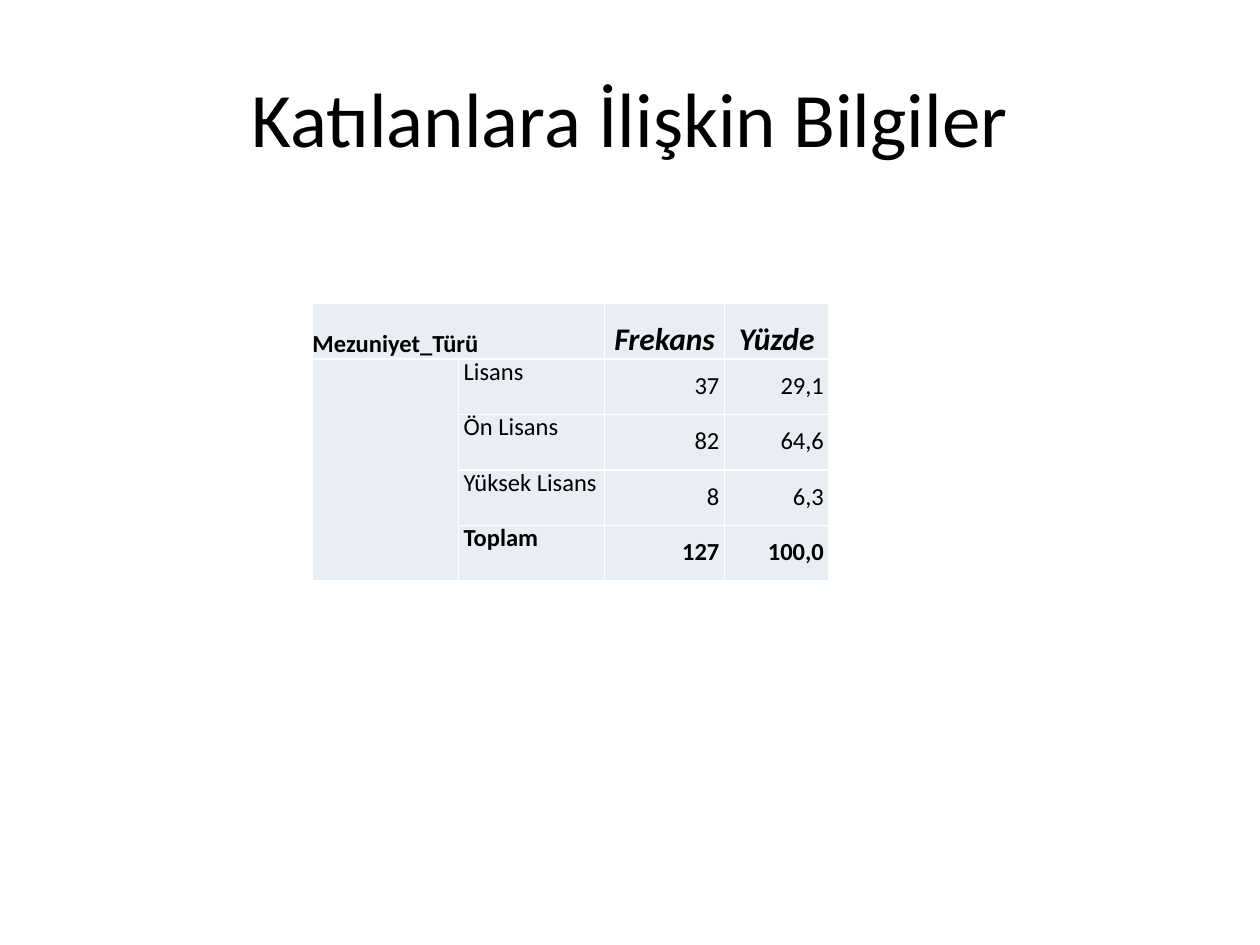
from dataclasses import dataclass

from lxml.etree import SubElement
from pptx import Presentation
from pptx.dml.color import RGBColor
from pptx.enum.text import MSO_ANCHOR, PP_ALIGN
from pptx.oxml.ns import qn
from pptx.util import Emu, Inches, Pt


@dataclass(frozen=True)
class Theme:
    font: str = "Calibri"
    ink: str = "000000"
    cell_fill: str = "E9EDF4"
    border: str = "FFFFFF"
    border_width: float = 1
    title_size: float = 44
    heading_size: float = 18
    body_size: float = 14
    line_height: float = 16
    cell_indent: float = 0.04


@dataclass(frozen=True)
class Degree:
    label: str
    frequency: str
    percent: str
    bold: bool = False


THEME = Theme()
TITLE = "Katılanlara İlişkin Bilgiler"
GROUP_HEADING = "Mezuniyet_Türü"
VALUE_HEADINGS = ("Frekans", "Yüzde")
DEGREES = (
    Degree("Lisans", "37", "29,1"),
    Degree("Ön Lisans", "82", "64,6"),
    Degree("Yüksek Lisans", "8", "6,3"),
    Degree("Toplam", "127", "100,0", bold=True),
)
COLUMN_WIDTHS = (1.16, 1.16, 0.95, 0.83)
ROW_HEIGHT = 0.44


def write(frame, text: str, *, size: float = THEME.body_size, bold: bool = False,
          italic: bool = False, align=PP_ALIGN.LEFT, spacing=None,
          indent: float = 0) -> None:
    """Write one formatted paragraph into a text frame."""
    paragraph = frame.paragraphs[0]
    paragraph.alignment = align
    if spacing is not None:
        paragraph.line_spacing = spacing
    if indent:
        properties = paragraph._p.get_or_add_pPr()
        for side in ("marL", "marR"):
            properties.set(side, str(Inches(indent)))
        properties.set("indent", "0")
    run = paragraph.add_run()
    run.text = text
    font = run.font
    font.name, font.size, font.bold, font.italic = THEME.font, Pt(size), bold, italic
    font.color.rgb = RGBColor.from_string(THEME.ink)


def style_cell(cell) -> None:
    """Give a cell its borders, fill and zero margins."""
    cell.margin_left = cell.margin_right = cell.margin_top = cell.margin_bottom = 0
    properties = cell._tc.get_or_add_tcPr()
    for edge in ("a:lnL", "a:lnR", "a:lnT", "a:lnB"):
        line = SubElement(properties, qn(edge), w=str(Pt(THEME.border_width)))
        SubElement(SubElement(line, qn("a:solidFill")), qn("a:srgbClr"), val=THEME.border)
    cell.fill.solid()
    cell.fill.fore_color.rgb = RGBColor.from_string(THEME.cell_fill)


def fill_cell(cell, text: str, anchor, **text_format) -> None:
    cell.vertical_anchor = anchor
    text_format = {"spacing": Pt(THEME.line_height), "indent": THEME.cell_indent} | text_format
    write(cell.text_frame, text, **text_format)


def add_degree_table(slide, left: Emu, top: Emu) -> None:
    row_count = len(DEGREES) + 1
    table = slide.shapes.add_table(
        row_count, len(COLUMN_WIDTHS), left, top,
        Inches(sum(COLUMN_WIDTHS)), Inches(ROW_HEIGHT * row_count)).table
    table.first_row = table.horz_banding = False
    for column, width in zip(table.columns, COLUMN_WIDTHS):
        column.width = Inches(width)
    for row in table.rows:
        row.height = Inches(ROW_HEIGHT)
    for cell in table.iter_cells():
        style_cell(cell)
    table.cell(0, 0).merge(table.cell(0, 1))
    table.cell(1, 0).merge(table.cell(row_count - 1, 0))

    # Heading row
    fill_cell(table.cell(0, 0), GROUP_HEADING, MSO_ANCHOR.BOTTOM,
              bold=True, spacing=1.15, indent=0)
    for column, heading in enumerate(VALUE_HEADINGS, start=2):
        fill_cell(table.cell(0, column), heading, MSO_ANCHOR.BOTTOM,
                  size=THEME.heading_size, bold=True, italic=True, align=PP_ALIGN.CENTER)

    # One row per degree, then the total
    for row, degree in enumerate(DEGREES, start=1):
        fill_cell(table.cell(row, 1), degree.label, MSO_ANCHOR.TOP, bold=degree.bold)
        for column, value in enumerate((degree.frequency, degree.percent), start=2):
            fill_cell(table.cell(row, column), value, MSO_ANCHOR.MIDDLE,
                      bold=degree.bold, align=PP_ALIGN.RIGHT)


def main() -> None:
    deck = Presentation()
    deck.slide_width, deck.slide_height = Inches(10), Inches(7.5)
    width, height = deck.slide_width, deck.slide_height
    slide = deck.slides.add_slide(deck.slide_layouts[5])

    # Title
    title = slide.shapes.title
    title.left, title.top = int(width * 0.05), int(height * 0.04)
    title.width, title.height = int(width * 0.9), Inches(1.25)
    title.text_frame.vertical_anchor = MSO_ANCHOR.MIDDLE
    write(title.text_frame, TITLE, size=THEME.title_size, align=PP_ALIGN.CENTER)

    # Table of graduation types
    add_degree_table(slide, Inches(2.48), Inches(2.41))
    deck.save("out.pptx")


if __name__ == "__main__":
    main()
